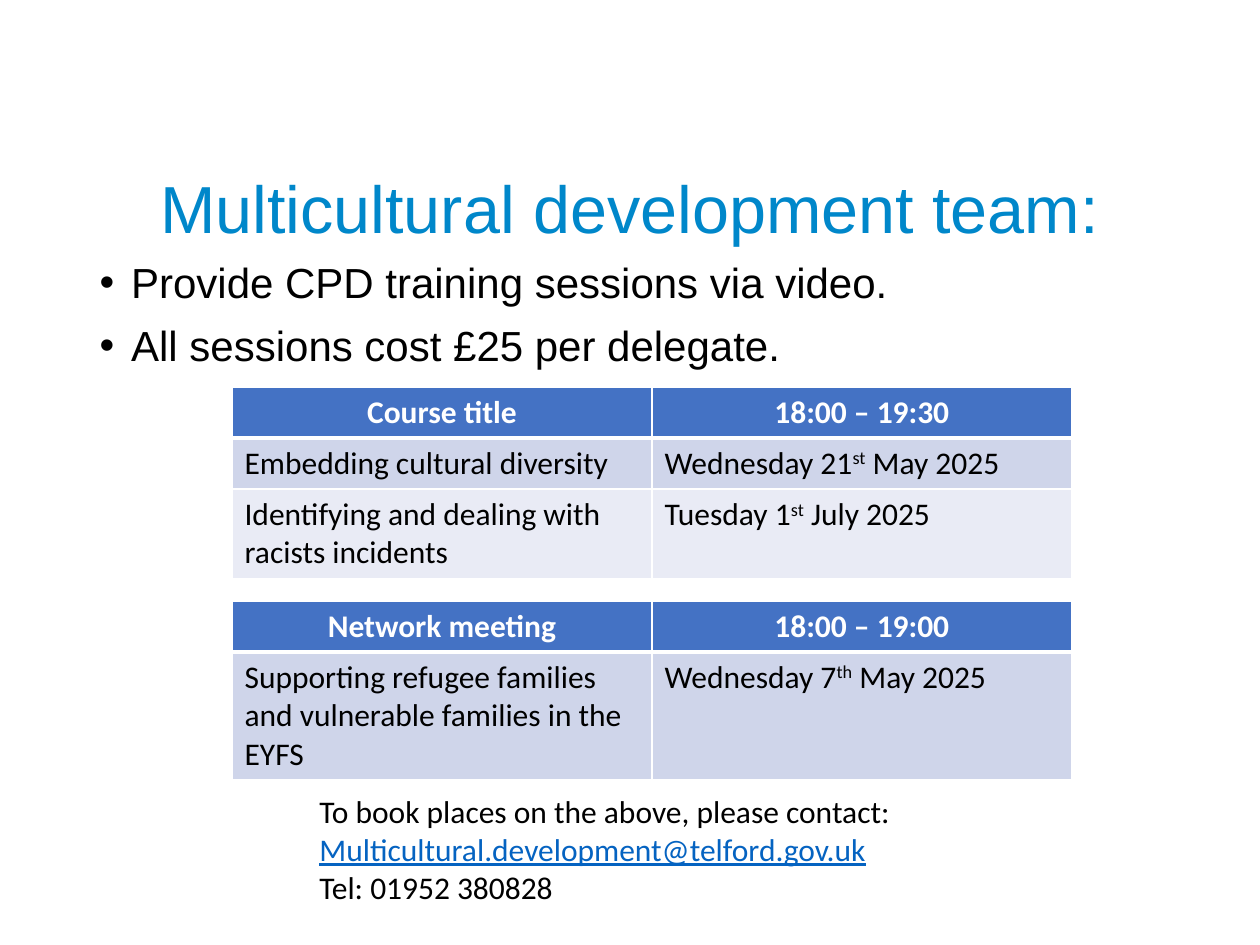
from lxml.etree import SubElement
from pptx import Presentation
from pptx.dml.color import RGBColor
from pptx.enum.text import MSO_ANCHOR as Anchor, MSO_AUTO_SIZE as AutoSize, PP_ALIGN as Align
from pptx.oxml.ns import qn
from pptx.util import Emu, Pt

TITLE = "Multicultural development team:"
BULLETS = [
    "Provide CPD training sessions via video.",
    "All sessions cost £25 per delegate.",
]
# A date is (text, superscript, text)
TABLES = [
    dict(top=387, heights=[51, 51, 88], rows=[
        ("Course title", "18:00 – 19:30"),
        ("Embedding cultural diversity", ("Wednesday 21", "st", " May 2025")),
        ("Identifying and dealing with racists incidents", ("Tuesday 1", "st", " July 2025")),
    ]),
    dict(top=601, heights=[51, 127], rows=[
        ("Network meeting", "18:00 – 19:00"),
        ("Supporting refugee families and vulnerable families in the EYFS",
         ("Wednesday 7", "th", " May 2025")),
    ]),
]
CONTACT = [
    ("To book places on the above, please contact:", {}),
    ("Multicultural.development@telford.gov.uk", dict(color="0563C1", underline=True)),
    ("Tel: 01952 380828", {}),
]

TITLE_BOX = (87, 168, 1086, 87)
BODY_BOX = (87, 256, 1086, 571)
CONTACT_BOX = (307, 786, 604, 127)
TABLE_LEFT, COLUMN_WIDTH = 232, 420
HEADER_FILL, BAND_FILLS = "4472C4", ("CFD5EA", "E9EBF5")
TITLE_FONT = dict(name="Arial", size=Pt(38), color="0087CA")
BODY_FONT = dict(name="Arial", size=Pt(24), color="000000")
TEXT_FONT = dict(name="Calibri", size=Pt(18), color="000000", bold=False)
HEADER_FONT = dict(TEXT_FONT, color="FFFFFF", bold=True)


def px(n):
    return Emu(round(n * 914400 / 126))


def rgb(value):
    return RGBColor.from_string(value)


def add_run(p, text, font):
    r = p.add_run()
    r.text = text
    for key, value in font.items():
        if key == "color":
            r.font.color.rgb = rgb(value)
        else:
            setattr(r.font, key, value)
    return r


def place(sp, box):
    sp.left, sp.top, sp.width, sp.height = map(px, box)


def add_bullet(p):
    pPr = p._p.get_or_add_pPr()
    pPr.set("marL", str(px(31.5)))
    pPr.set("indent", str(-px(31.5)))
    SubElement(pPr, qn("a:buFont"), typeface="Arial")
    SubElement(pPr, qn("a:buChar"), char="•")


def set_borders(cell, widths):
    """Draw white borders; widths maps L, R, T and B to points."""
    tcPr = cell._tc.get_or_add_tcPr()
    for side, width in widths.items():
        ln = SubElement(tcPr, qn(f"a:ln{side}"), w=str(Pt(width)))
        fill = SubElement(ln, qn("a:solidFill"))
        SubElement(fill, qn("a:srgbClr"), val="FFFFFF")


def fill_cell(cell, content, row):
    header = row == 0
    set_borders(cell, dict(L=1, R=1, T=3 if row == 1 else 1, B=3 if header else 1))
    cell.fill.solid()
    cell.fill.fore_color.rgb = rgb(HEADER_FILL if header else BAND_FILLS[(row - 1) % 2])
    p = cell.text_frame.paragraphs[0]
    p.alignment = Align.CENTER if header else Align.LEFT
    parts = (content,) if isinstance(content, str) else content
    for i, text in enumerate(parts):
        r = add_run(p, text, HEADER_FONT if header else TEXT_FONT)
        if i == 1:
            r._r.get_or_add_rPr().set("baseline", "30000")


def add_schedule(slide, top, heights, rows):
    frame = slide.shapes.add_table(len(rows), 2, px(TABLE_LEFT), px(top),
                                   px(2 * COLUMN_WIDTH), px(sum(heights)))
    table = frame.table
    for column in table.columns:
        column.width = px(COLUMN_WIDTH)
    for i, (height, contents) in enumerate(zip(heights, rows)):
        table.rows[i].height = px(height)
        for j, content in enumerate(contents):
            fill_cell(table.cell(i, j), content, i)


def main():
    prs = Presentation()
    prs.slide_width, prs.slide_height = px(1260), px(945)
    slide = prs.slides.add_slide(prs.slide_layouts[1])
    title, body = slide.placeholders

    place(title, TITLE_BOX)
    tf = title.text_frame
    tf.auto_size, tf.vertical_anchor = AutoSize.NONE, Anchor.MIDDLE
    p = tf.paragraphs[0]
    p.alignment, p.line_spacing = Align.CENTER, 0.9
    add_run(p, TITLE, TITLE_FONT)

    place(body, BODY_BOX)
    tf = body.text_frame
    tf.auto_size = AutoSize.NONE
    for i, text in enumerate(BULLETS):
        p = tf.add_paragraph() if i else tf.paragraphs[0]
        p.line_spacing, p.space_before = 0.9, Pt(10 if i else 0)
        add_bullet(p)
        add_run(p, text, BODY_FONT)

    for schedule in TABLES:
        add_schedule(slide, **schedule)

    tf = slide.shapes.add_textbox(*map(px, CONTACT_BOX)).text_frame
    tf.word_wrap, tf.auto_size = False, AutoSize.SHAPE_TO_FIT_TEXT
    for i, (text, style) in enumerate(CONTACT):
        p = tf.add_paragraph() if i else tf.paragraphs[0]
        add_run(p, text, {**TEXT_FONT, **style})

    prs.save("out.pptx")


if __name__ == "__main__":
    main()
